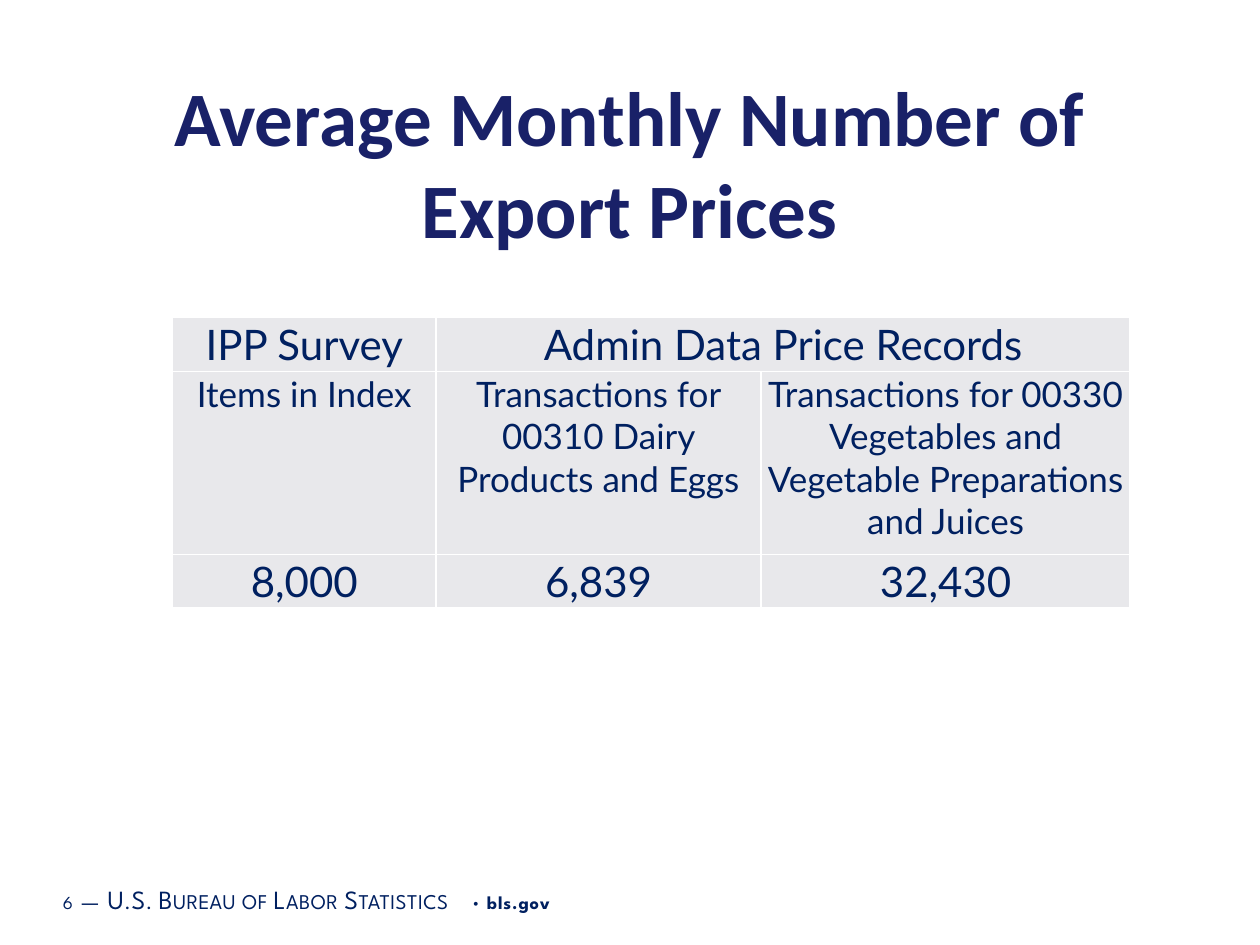
from lxml import etree
from pptx import Presentation
from pptx.dml.color import RGBColor
from pptx.enum.text import MSO_ANCHOR, MSO_AUTO_SIZE, PP_ALIGN
from pptx.oxml.ns import qn
from pptx.util import Inches, Pt

CENTER = PP_ALIGN.CENTER
TOP, MIDDLE = MSO_ANCHOR.TOP, MSO_ANCHOR.MIDDLE
NO_FIT = MSO_AUTO_SIZE.NONE

NAVY, INDIGO, GRAY, WHITE = "002060", "192168", "E8E8EB", "FFFFFF"

COL_WIDTHS = [2.09, 2.58, 2.93]
ROW_HEIGHTS = [0.43, 1.45, 0.42]
ROW_SIZES = [24, 20, 24]
ROWS = [
    ["IPP Survey\u00a0".strip(), "Admin Data Price Records", ""],
    ["Items in Index",
     "Transactions for 00310 Dairy Products and Eggs",
     "Transactions for 00330 Vegetables and Vegetable Preparations and Juices"],
    ["8,000", "6,839", "32,430"],
]

# Footer runs: text, size, letter spacing in hundredths, small caps, bold
FOOTER = [
    ("6", 10.5, 50, False, False),
    (" ", 16, 50, False, False),
    ("—", 15, 30, True, False),
    (" ", 16, 50, False, False),
    ("U.S. Bureau of Labor Statistics", 15, 30, True, False),
    (" • ", 10.5, 50, False, False),
    ("bls.gov", 10.5, 50, False, True),
]


def color(value):
    return RGBColor.from_string(value)


def set_font(font, name, size, rgb, bold=False):
    font.name, font.size, font.bold = name, Pt(size), bold
    font.color.rgb = color(rgb)


def add_title(s, text):
    title = s.shapes.title
    title.left, title.top = Inches(0.5), Inches(0.5)
    title.width, title.height = Inches(9), Inches(0.88)
    tf = title.text_frame
    tf.text = text
    tf.auto_size, tf.vertical_anchor = NO_FIT, TOP
    p = tf.paragraphs[0]
    p.alignment = CENTER
    set_font(p.font, "Calibri", 44, INDIGO, True)


def set_borders(cell, rgb, width):
    tcPr = cell._tc.get_or_add_tcPr()
    for side in ("lnL", "lnR", "lnT", "lnB"):
        ln = etree.SubElement(tcPr, qn(f"a:{side}"), w=str(Pt(width)))
        fill = etree.SubElement(ln, qn("a:solidFill"))
        etree.SubElement(fill, qn("a:srgbClr"), val=rgb)


def format_cell(cell, text, size):
    set_borders(cell, WHITE, 1)
    cell.fill.solid()
    cell.fill.fore_color.rgb = color(GRAY)
    cell.margin_left = cell.margin_right = cell.margin_top = Inches(0.01)
    cell.margin_bottom = 0
    p = cell.text_frame.paragraphs[0]
    p.text = text
    p.alignment = CENTER
    set_font(p.font, "Lato", size, NAVY)


def add_price_table(s):
    frame = s.shapes.add_table(
        len(ROWS), len(COL_WIDTHS), Inches(1.37), Inches(2.52),
        Inches(sum(COL_WIDTHS)), Inches(sum(ROW_HEIGHTS)))
    table = frame.table
    for col, width in zip(table.columns, COL_WIDTHS):
        col.width = Inches(width)
    for row, height, texts, size in zip(table.rows, ROW_HEIGHTS, ROWS, ROW_SIZES):
        row.height = Inches(height)
        for cell, text in zip(row.cells, texts):
            format_cell(cell, text, size)
    # The admin data heading covers both transaction columns
    table.cell(0, 1).merge(table.cell(0, 2))


def add_footer(s):
    box = s.shapes.add_textbox(Inches(0.43), Inches(6.93), Inches(6.33), Inches(0.4))
    tf = box.text_frame
    tf.word_wrap, tf.vertical_anchor = True, MIDDLE
    tf.margin_left = tf.margin_right = Inches(0.07)
    tf.margin_top = tf.margin_bottom = Inches(0.04)
    p = tf.paragraphs[0]
    for text, size, spacing, small_caps, bold in FOOTER:
        r = p.add_run()
        r.text = text
        set_font(r.font, "League Spartan", size, NAVY, bold)
        rPr = r._r.get_or_add_rPr()
        rPr.set("spc", str(spacing))
        if small_caps:
            rPr.set("cap", "small")


def main():
    prs = Presentation()
    prs.slide_width, prs.slide_height = Inches(10), Inches(7.5)
    s = prs.slides.add_slide(prs.slide_layouts.get_by_name("Title Only"))
    add_footer(s)
    add_title(s, "Average Monthly Number of Export Prices")
    add_price_table(s)
    prs.save("out.pptx")


if __name__ == "__main__":
    main()
